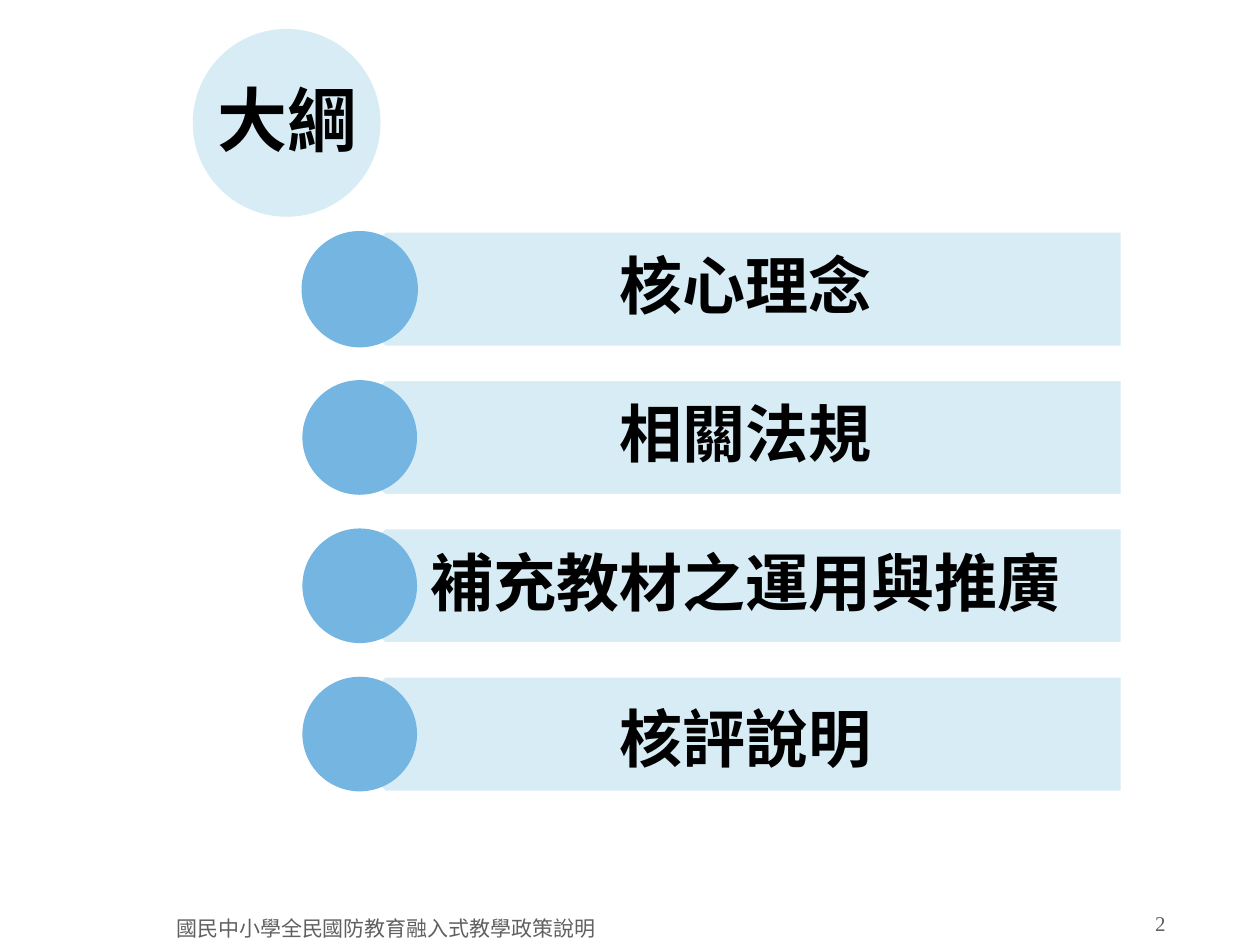
from lxml import etree
from pptx import Presentation
from pptx.dml.color import RGBColor
from pptx.enum.shapes import MSO_SHAPE
from pptx.enum.text import MSO_ANCHOR, PP_ALIGN
from pptx.oxml.ns import qn
from pptx.util import Inches, Pt

PENTAGON, OVAL = MSO_SHAPE.PENTAGON, MSO_SHAPE.OVAL
TOP, MIDDLE = MSO_ANCHOR.TOP, MSO_ANCHOR.MIDDLE
LEFT, CENTER = PP_ALIGN.LEFT, PP_ALIGN.CENTER

COLORS = {"pale": "D7ECF5", "blue": "74B5E2", "white": "FFFFFF",
          "black": "000000", "gray": "606060"}
CJK, SERIF = "Noto Sans CJK SC", "Times New Roman"

TITLE = "大綱"
FOOTER = "國民中小學全民國防教育融入式教學政策說明"
PAGE_NUMBER = "2"
TOPICS = [
    ("核心理念", 0.15, 0.9),
    ("相關法規", 0.15, 0.9),
    ("補充教材之運用與推廣", 0.15, 0.9),
    ("核評說明", 0.39, Pt(30)),
]
FIRST_TOP, ROW_STEP, ROW_HEIGHT = 1.84, 1.177, 0.91


def color(name):
    return RGBColor.from_string(COLORS[name])


def add_shape(page, kind, area, fill, line=None):
    shape = page.shapes.add_shape(kind, *map(Inches, area))
    shape.shadow.inherit = False
    shape.fill.solid()
    shape.fill.fore_color.rgb = color(fill)
    if line:
        shape.line.color.rgb = color(line)
        shape.line.width = Pt(1)
    else:
        shape.line.fill.background()
    return shape


def add_text(page, text, area, size, ink, font=CJK, bold=False, align=LEFT,
             anchor=TOP, insets=(0.1, 0.05, 0.1, 0.05), spacing=None):
    box = page.shapes.add_textbox(*map(Inches, area))
    frame = box.text_frame
    frame.text = text
    frame.word_wrap = True
    frame.vertical_anchor = anchor
    (frame.margin_left, frame.margin_top,
     frame.margin_right, frame.margin_bottom) = map(Inches, insets)
    para = frame.paragraphs[0]
    para.alignment = align
    para.line_spacing = spacing
    span = para.runs[0]
    span.font.size = Pt(size)
    span.font.bold = bold
    span.font.color.rgb = color(ink)
    span.font.name = font
    east_asian = etree.SubElement(span.font._element, qn("a:ea"))
    east_asian.set("typeface", font)


def add_topic(page, index, topic):
    text, inset_top, spacing = topic
    top = FIRST_TOP + index * ROW_STEP
    bar = add_shape(page, PENTAGON, (2.6, top, 6.3, ROW_HEIGHT), "pale", "white")
    bar.rotation = 180
    add_text(page, text, (2.82, top, 6.07, ROW_HEIGHT), 36, "black", bold=True,
             align=CENTER, anchor=MIDDLE, insets=(0.4, inset_top, 0.28, 0.15),
             spacing=spacing)
    add_shape(page, OVAL, (2.4, top, ROW_HEIGHT, ROW_HEIGHT), "blue",
              "blue" if index == 0 else None)


def main():
    deck = Presentation()
    deck.slide_width, deck.slide_height = Inches(10), Inches(7.5)
    page = deck.slides.add_slide(deck.slide_layouts[6])
    for index, topic in enumerate(TOPICS):
        add_topic(page, index, topic)
    add_shape(page, OVAL, (1.53, 0.23, 1.49, 1.49), "pale")
    add_text(page, TITLE, (1.63, 0.56, 1.39, 0.77), 40, "black", bold=True)
    add_text(page, FOOTER, (1.3, 7.22, 3.96, 0.35), 12, "gray")
    add_text(page, PAGE_NUMBER, (9.07, 7.18, 0.94, 0.28), 12, "gray", SERIF)
    deck.save("out.pptx")


if __name__ == "__main__":
    main()
